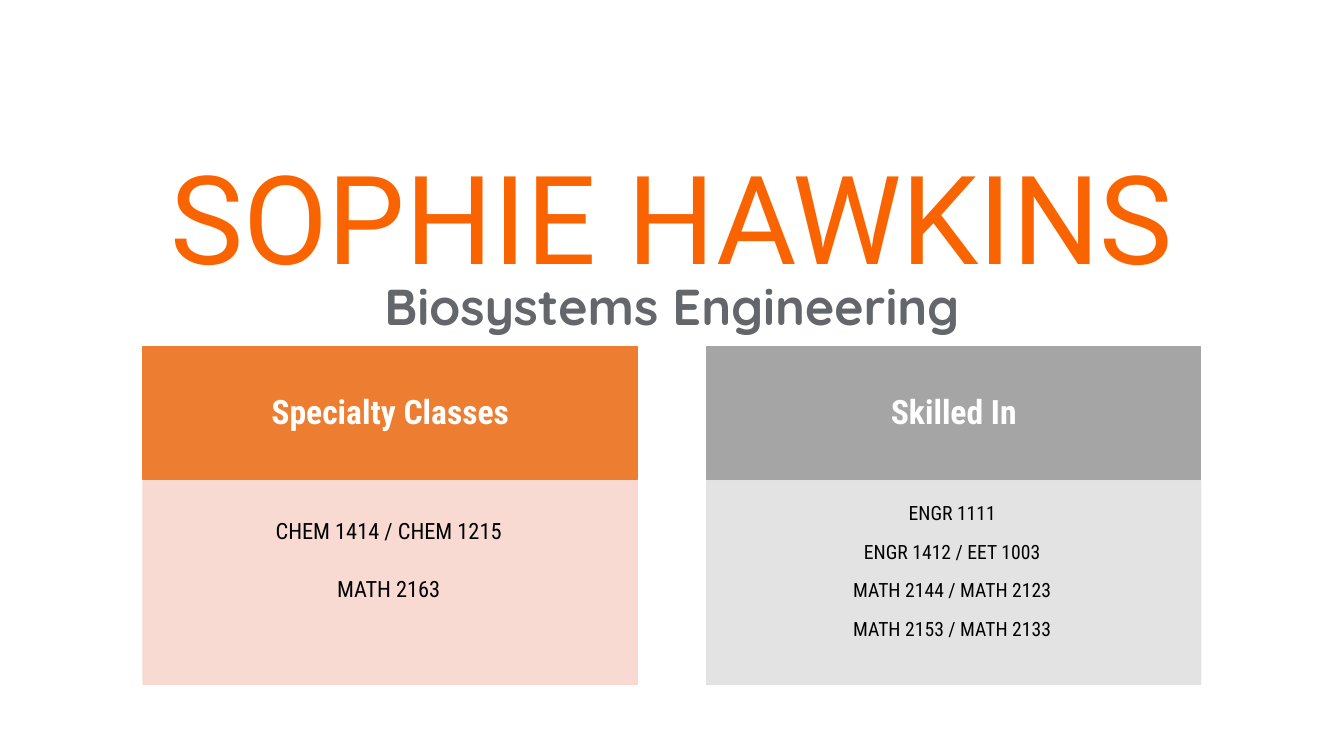
from lxml import etree
from pptx import Presentation
from pptx.dml.color import RGBColor
from pptx.enum.shapes import MSO_SHAPE
from pptx.enum.text import MSO_ANCHOR, PP_ALIGN
from pptx.oxml.ns import qn
from pptx.util import Emu, Pt

RECTANGLE = MSO_SHAPE.RECTANGLE
CENTER = PP_ALIGN.CENTER
TOP = MSO_ANCHOR.TOP
MIDDLE = MSO_ANCHOR.MIDDLE
EMU_PER_PX = 9144
PANEL_WIDTH = 490
HEADER_TOP, HEADER_HEIGHT = 344, 132
BODY_TOP, BODY_HEIGHT = 477, 202


def px(length):
    return Emu(length * EMU_PER_PX)


def color(value):
    return RGBColor.from_string(value)


def set_insets(frame, left, top, right, bottom):
    frame.margin_left, frame.margin_top = px(left), px(top)
    frame.margin_right, frame.margin_bottom = px(right), px(bottom)


def write_lines(frame, lines, font, size, ink, bold=False, spacing=1.0, after=0):
    frame.word_wrap = True
    for index, line in enumerate(lines):
        para = frame.add_paragraph() if index else frame.paragraphs[0]
        para.alignment = CENTER
        para.line_spacing = spacing
        para.space_after = Pt(after)
        span = para.add_run()
        span.text = line
        span.font.name = font
        span.font.size = Pt(size)
        span.font.bold = bold
        span.font.color.rgb = color(ink)


def add_heading(page, top, height, text, font, size, ink, bold=False):
    box = page.shapes.add_textbox(px(63), px(top), px(1207), px(height))
    write_lines(box.text_frame, [text], font, size, ink, bold)


def add_block(page, left, top, height, fill, opacity=100):
    block = page.shapes.add_shape(RECTANGLE, px(left), px(top), px(PANEL_WIDTH), px(height))
    block.shadow.inherit = False
    block.fill.solid()
    block.fill.fore_color.rgb = color(fill)
    block.line.color.rgb = color(fill)
    block.line.width = Pt(1)
    if opacity < 100:
        for tint in block.element.spPr.iter(qn("a:srgbClr")):
            etree.SubElement(tint, qn("a:alpha"), val=str(opacity * 1000))
    return block.text_frame


def add_panel(page, left, title, title_fill, courses, body_fill, size, spacing, after, insets):
    header = add_block(page, left, HEADER_TOP, HEADER_HEIGHT, title_fill)
    header.vertical_anchor = MIDDLE
    set_insets(header, 19, 11, 19, 11)
    write_lines(header, [title], "Roboto Condensed", 24, "FFFFFF", True, 0.9)

    body = add_block(page, left, BODY_TOP, BODY_HEIGHT, body_fill, 90)
    body.vertical_anchor = TOP
    set_insets(body, *insets)
    write_lines(body, courses, "Roboto Condensed", size, "000000", False, spacing, after)


def main():
    deck = Presentation()
    deck.slide_width, deck.slide_height = px(1333), px(750)
    page = deck.slides.add_slide(deck.slide_layouts[6])

    add_heading(page, 135, 158, "SOPHIE HAWKINS", "Roboto", 88, "FA6400")
    add_heading(page, 268, 71, "Biosystems Engineering", "Quicksand", 36, "63666A", True)

    classes = ["CHEM 1414 / CHEM 1215", "MATH 2163"]
    skills = ["ENGR 1111", "ENGR 1412 / EET 1003", "MATH 2144 / MATH 2123", "MATH 2153 / MATH 2133"]
    add_panel(page, 142, "Specialty Classes", "ED7D31", classes, "F8D7CE", 16, 2.0, 3, (9, 9, 12, 14))
    add_panel(page, 701, "Skilled In", "A5A5A5", skills, "E1E1E1", 14, 1.5, 2.5, (8, 8, 11, 12))

    deck.save("out.pptx")


if __name__ == "__main__":
    main()
